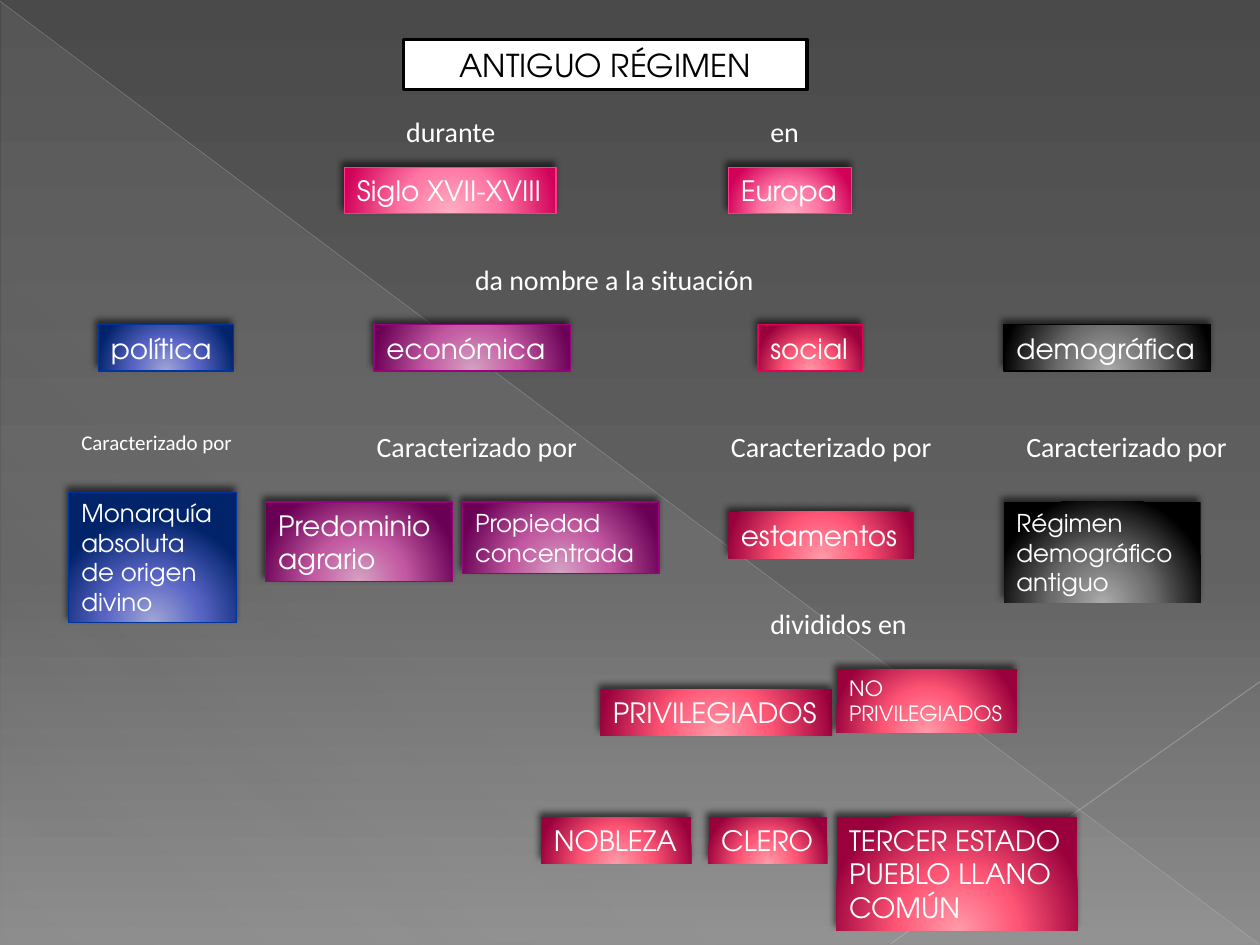
"""Build the concept map slide about the Antiguo Régimen."""
from lxml.etree import SubElement
from pptx import Presentation
from pptx.dml.color import RGBColor
from pptx.enum.shapes import MSO_CONNECTOR, MSO_SHAPE
from pptx.enum.text import MSO_ANCHOR, MSO_AUTO_SIZE, PP_ALIGN
from pptx.oxml.ns import qn
from pptx.util import Inches, Pt

WIDTH, HEIGHT = 10, 7.5
UNIT = WIDTH / 128
HEADING, LABEL = "TeX Gyre Adventor", "Calibri"
WHITE, BLACK = "FFFFFF", "000000"

BACKDROP = [(0, "4A4A4A", 100), (60, "626262", 100), (100, "8C8C8C", 100)]
SHEEN = [(0, "D2D2D2", 10), (70, "D2D2D2", 8), (100, "D2D2D2", 1)]
RAYS = [
    ((0, 0.01), (9.99, 7.49), "BFBFBF", 0.39, 35),
    ((10, 5.41), (7.07, 7.49), "C6C6C6", 0.47, 45),
]
GLOWS = {
    "pink": ("FFAFC5", "FF75A3", "D10058"),
    "blue": ("A1A6D6", "5864C4", "00236A"),
    "purple": ("D5A2C3", "C259A1", "690055"),
    "red": ("FF9BA9", "FF5575", "99003C"),
    "black": ("ABABAB", "6C6C6C", "000000"),
}
BORDERS = {"pink": "FF388C", "blue": "00349E", "purple": "9C007F",
           "red": "E40059", "black": "000000"}

# text, column, row, width, size
LABELS = [
    ("durante", 40, 11, 0.92, 16),
    ("en", 77, 11, 0.43, 16),
    ("da nombre a la situación", 47, 26, 2.44, 16),
    ("Caracterizado por", 7, 43, 1.45, 12),
    ("Caracterizado por", 37, 43, 1.86, 16),
    ("Caracterizado por", 73, 43, 1.86, 16),
    ("Caracterizado por", 103, 43, 1.86, 16),
    ("divididos en", 77, 61, 1.3, 16),
]
# text, glow, bordered, column, row, width, lines, size, wrapped
CONCEPTS = [
    ("Siglo XVII-XVIII", "pink", True, 35, 17, 1.68, 1, 16, False),
    ("Europa", "pink", True, 74, 17, 0.98, 1, 16, False),
    ("política", "blue", True, 10, 33, 1.07, 1, 16, True),
    ("económica", "purple", True, 38, 33, 1.56, 1, 16, True),
    ("social", "red", True, 77, 33, 0.83, 1, 16, False),
    ("demográfica", "black", True, 102, 33, 1.64, 1, 16, False),
    ("Monarquía absoluta de origen divino", "blue", True, 7, 50, 1.33, 4, 14, True),
    ("Predominio\nagrario", "purple", True, 27, 51, 1.48, 2, 16, True),
    ("Propiedad concentrada", "purple", True, 47, 51, 1.56, 2, 14, True),
    ("estamentos", "red", False, 74, 52, 1.47, 1, 16, False),
    ("Régimen demográfico antiguo", "black", False, 102, 51, 1.56, 3, 14, True),
    ("PRIVILEGIADOS", "red", False, 61, 70, 1.84, 1, 16, False),
    ("NO PRIVILEGIADOS", "red", False, 85, 68, 1.43, 2, 12, True),
    ("NOBLEZA", "red", False, 55, 83, 1.19, 1, 16, False),
    ("CLERO", "red", False, 72, 83, 0.94, 1, 16, False),
    ("TERCER ESTADO\nPUEBLO LLANO\nCOMÚN", "red", False, 85, 83, 1.91, 3, 16, False),
]


def color(value):
    return RGBColor.from_string(value)


def add_color(parent, value, alpha):
    entry = SubElement(parent, qn("a:srgbClr"), val=value)
    if alpha < 100:
        SubElement(entry, qn("a:alpha"), val=str(alpha * 1000))


def add_gradient(properties, stops, angle=None):
    """Swap a solid fill for a linear gradient, or a glow from below without an angle."""
    solid = properties.find(qn("a:solidFill"))
    gradient = SubElement(properties, qn("a:gradFill"), rotWithShape="1")
    properties.replace(solid, gradient)
    stop_list = SubElement(gradient, qn("a:gsLst"))
    for position, value, alpha in stops:
        add_color(SubElement(stop_list, qn("a:gs"), pos=str(position * 1000)), value, alpha)
    if angle is None:
        path = SubElement(gradient, qn("a:path"), path="circle")
        SubElement(path, qn("a:fillToRect"), l="50000", t="155000", r="50000", b="-55000")
    else:
        SubElement(gradient, qn("a:lin"), ang=str(angle * 60000), scaled="0")


def add_shadow(shape):
    effects = shape.element.spPr.find(qn("a:effectLst"))
    shadow = SubElement(effects, qn("a:outerShdw"), blurRad=str(Pt(4)), dist=str(Pt(3)),
                        dir=str(245 * 60000), algn="ctr", rotWithShape="0")
    add_color(shadow, BLACK, 60)


def text_height(lines, size):
    return 0.1 + lines * size / 60


def frame(column, row, width, lines, size):
    sides = column * UNIT, row * UNIT, width, text_height(lines, size)
    return [Inches(side) for side in sides]


def write(box, text, size, font, ink=WHITE, wrap=False, align=PP_ALIGN.LEFT):
    text_frame = box.text_frame
    text_frame.text = text
    text_frame.word_wrap = wrap
    text_frame.auto_size = MSO_AUTO_SIZE.NONE
    text_frame.vertical_anchor = MSO_ANCHOR.TOP
    for para in text_frame.paragraphs:
        para.alignment = align
        for span in para.runs:
            span.font.size, span.font.name = Pt(size), font
            span.font.color.rgb = color(ink)


def add_backdrop(slide):
    slide.background.fill.solid()
    add_gradient(slide.element.find(".//" + qn("p:bgPr")), BACKDROP, 90)
    triangle = slide.shapes.add_shape(MSO_SHAPE.RIGHT_TRIANGLE, Inches(0.01), Inches(0.02),
                                      Inches(9.99), Inches(7.48))
    triangle.shadow.inherit = False
    triangle.line.fill.background()
    triangle.fill.solid()
    add_gradient(triangle.element.spPr, SHEEN, 133)
    for start, end, value, weight, alpha in RAYS:
        ends = [Inches(length) for length in start + end]
        ray = slide.shapes.add_connector(MSO_CONNECTOR.STRAIGHT, *ends)
        ray.line.width = Pt(weight)
        ray.line.color.rgb = color(value)
        tint = ray.element.spPr.find(".//" + qn("a:srgbClr"))
        SubElement(tint, qn("a:alpha"), val=str(alpha * 1000))
        SubElement(ray.element.spPr, qn("a:effectLst"))


def add_title(slide):
    title = slide.shapes.title
    title.left, title.top, title.width, title.height = frame(41, 4, 3.2, 1, 18)
    title.fill.solid()
    title.fill.fore_color.rgb = color(WHITE)
    title.line.color.rgb = color(BLACK)
    title.line.width = Pt(2)
    write(title, "ANTIGUO RÉGIMEN", 18, HEADING, BLACK, True, PP_ALIGN.CENTER)


def add_concept(slide, text, glow, bordered, column, row, width, lines, size, wrapped):
    box = slide.shapes.add_shape(MSO_SHAPE.RECTANGLE, *frame(column, row, width, lines, size))
    box.fill.solid()
    stops = [(place, value, 100) for place, value in zip((0, 46, 100), GLOWS[glow])]
    add_gradient(box.element.spPr, stops)
    if bordered:
        box.line.color.rgb = color(BORDERS[glow])
        box.line.width = Pt(0.75)
    else:
        box.line.fill.background()
    box.shadow.inherit = False
    add_shadow(box)
    write(box, text, size, HEADING, wrap=wrapped)


def main():
    deck = Presentation()
    deck.slide_width, deck.slide_height = Inches(WIDTH), Inches(HEIGHT)
    slide = deck.slides.add_slide(deck.slide_layouts[5])
    add_backdrop(slide)
    add_title(slide)
    for text, column, row, width, size in LABELS:
        box = slide.shapes.add_textbox(*frame(column, row, width, 1, size))
        write(box, text, size, LABEL)
    for concept in CONCEPTS:
        add_concept(slide, *concept)
    deck.save("out.pptx")


if __name__ == "__main__":
    main()
